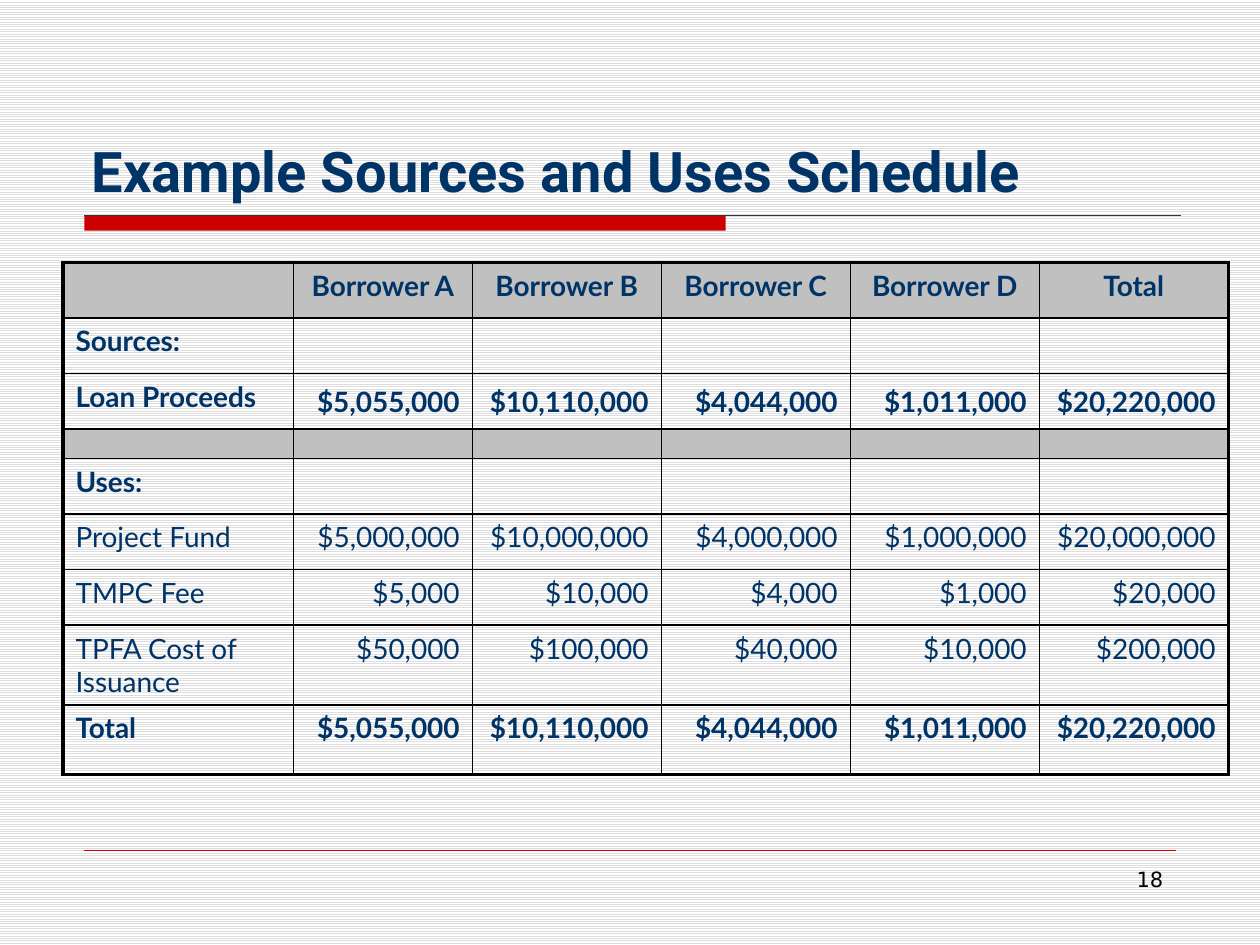
import lxml.etree
import pptx
import pptx.dml.color
import pptx.enum.dml
import pptx.enum.shapes
import pptx.enum.text
import pptx.oxml.ns
import pptx.util

Cm = pptx.util.Cm
Pt = pptx.util.Pt
RGBColor = pptx.dml.color.RGBColor
Align = pptx.enum.text.PP_ALIGN
Anchor = pptx.enum.text.MSO_ANCHOR
qn = pptx.oxml.ns.qn

NAVY = RGBColor(0x00, 0x33, 0x66)
RED = RGBColor(0xCC, 0x00, 0x00)
SILVER = RGBColor(0xC0, 0xC0, 0xC0)
STRIPE = RGBColor(0xDD, 0xDD, 0xDD)
WHITE = RGBColor(0xFF, 0xFF, 0xFF)
BLACK = RGBColor(0x00, 0x00, 0x00)
CHARCOAL = RGBColor(0x33, 0x33, 0x33)

THIN, THICK = Pt(1), Pt(2.25)
COLUMN_WIDTHS = [4.65, 3.6] + [3.81] * 4
ROW_HEIGHTS = [1.12] * 3 + [0.51] + [1.12] * 4 + [1.4]
HEADER_ROW, PROCEEDS_ROW, SPACER_ROW = 0, 2, 3
BOLD_ROWS = {0, 1, 2, 4, 8}
SCHEDULE = [
    ["", "Borrower A", "Borrower B", "Borrower C", "Borrower D", "Total"],
    ["Sources:"] + [""] * 5,
    ["Loan Proceeds", "$5,055,000", "$10,110,000", "$4,044,000", "$1,011,000", "$20,220,000"],
    [""] * 6,
    ["Uses:"] + [""] * 5,
    ["Project Fund", "$5,000,000", "$10,000,000", "$4,000,000", "$1,000,000", "$20,000,000"],
    ["TMPC Fee", "$5,000", "$10,000", "$4,000", "$1,000", "$20,000"],
    ["TPFA Cost of Issuance", "$50,000", "$100,000", "$40,000", "$10,000", "$200,000"],
    ["Total", "$5,055,000", "$10,110,000", "$4,044,000", "$1,011,000", "$20,220,000"],
]


class SlideBuilder:
    title_font = "Roboto"
    table_font = "Lato"
    number_font = "DejaVu Sans"

    def __init__(self, presentation):
        self.slide = presentation.slides.add_slide(presentation.slide_layouts[5])

    def background(self):
        fill = self.slide.background.fill
        fill.patterned()
        fill.pattern = pptx.enum.dml.MSO_PATTERN.LIGHT_HORIZONTAL
        fill.fore_color.rgb = STRIPE
        fill.back_color.rgb = WHITE

    def set_text(self, paragraph, text, font, size, color, bold=False, align=Align.LEFT):
        paragraph.text = text
        paragraph.alignment = align
        paragraph.font.name = font
        paragraph.font.size = Pt(size)
        paragraph.font.bold = bold
        paragraph.font.color.rgb = color

    def title(self, text, left, top, width, height):
        shape = self.slide.shapes.title
        shape.left, shape.top = Cm(left), Cm(top)
        shape.width, shape.height = Cm(width), Cm(height)
        frame = shape.text_frame
        frame.auto_size = pptx.enum.text.MSO_AUTO_SIZE.NONE
        frame.vertical_anchor = Anchor.BOTTOM
        self.set_text(frame.paragraphs[0], text, self.title_font, 32, NAVY, True)

    def bar(self, left, top, width, height):
        shape = self.slide.shapes.add_shape(
            pptx.enum.shapes.MSO_SHAPE.RECTANGLE, Cm(left), Cm(top), Cm(width), Cm(height))
        shape.shadow.inherit = False
        shape.fill.solid()
        shape.fill.fore_color.rgb = RED
        shape.line.fill.background()

    def rule(self, left, right, top, color, weight):
        connector = self.slide.shapes.add_connector(
            pptx.enum.shapes.MSO_CONNECTOR.STRAIGHT, Cm(left), Cm(top), Cm(right), Cm(top))
        connector.line.color.rgb = color
        connector.line.width = Pt(weight)
        lxml.etree.SubElement(connector._element.spPr, qn("a:effectLst"))

    def number(self, text, left, top, width, height):
        box = self.slide.shapes.add_textbox(Cm(left), Cm(top), Cm(width), Cm(height))
        box.text_frame.word_wrap = True
        self.set_text(box.text_frame.paragraphs[0], text, self.number_font, 12, BLACK,
                      align=Align.RIGHT)

    def borders(self, cell, weights):
        properties = cell._tc.get_or_add_tcPr()
        for index, (side, weight) in enumerate(weights.items()):
            line = lxml.etree.Element(qn(f"a:ln{side}"), w=str(int(weight)))
            fill = lxml.etree.SubElement(line, qn("a:solidFill"))
            lxml.etree.SubElement(fill, qn("a:srgbClr"), val=str(BLACK))
            properties.insert(index, line)

    def cell(self, cell, text, row, column):
        if row in (HEADER_ROW, SPACER_ROW):
            cell.fill.solid()
            cell.fill.fore_color.rgb = SILVER
        else:
            cell.fill.background()
        if row == PROCEEDS_ROW and column:
            cell.vertical_anchor = Anchor.MIDDLE
        paragraph = cell.text_frame.paragraphs[0]
        if text:
            align = Align.CENTER if row == HEADER_ROW else Align.RIGHT if column else Align.LEFT
            self.set_text(paragraph, text, self.table_font, 16, NAVY, row in BOLD_ROWS, align)
        else:
            paragraph.font.size = Pt(8)
            lxml.etree.SubElement(paragraph._p, qn("a:endParaRPr"), sz="800")
        self.borders(cell, {
            "L": THICK if column == 0 else THIN,
            "R": THICK if column == len(COLUMN_WIDTHS) - 1 else THIN,
            "T": THICK if row == 0 else THIN,
            "B": THICK if row == len(ROW_HEIGHTS) - 1 else THIN,
        })

    def table(self, rows, left, top):
        table = self.slide.shapes.add_table(
            len(ROW_HEIGHTS), len(COLUMN_WIDTHS), Cm(left), Cm(top),
            Cm(sum(COLUMN_WIDTHS)), Cm(sum(ROW_HEIGHTS))).table
        table.first_row = False
        table.horz_banding = False
        for column, width in zip(table.columns, COLUMN_WIDTHS):
            column.width = Cm(width)
        for row, height in zip(table.rows, ROW_HEIGHTS):
            row.height = Cm(height)
        for row, texts in enumerate(rows):
            for column, text in enumerate(texts):
                self.cell(table.cell(row, column), text, row, column)


def main():
    presentation = pptx.Presentation()
    presentation.slide_width, presentation.slide_height = Cm(25.4), Cm(19.05)
    builder = SlideBuilder(presentation)
    builder.background()
    builder.bar(1.7, 4.34, 12.93, 0.31)
    builder.rule(1.7, 23.8, 4.34, CHARCOAL, 0.75)
    builder.rule(1.7, 23.7, 17.15, RED, 0.25)
    builder.number("18", 18.2, 17.35, 5.5, 1.32)
    builder.title("Example Sources and Uses Schedule", 1.6, 0.84, 22.23, 3.39)
    builder.table(SCHEDULE, 1.27, 5.29)
    presentation.save("out.pptx")


if __name__ == "__main__":
    main()
